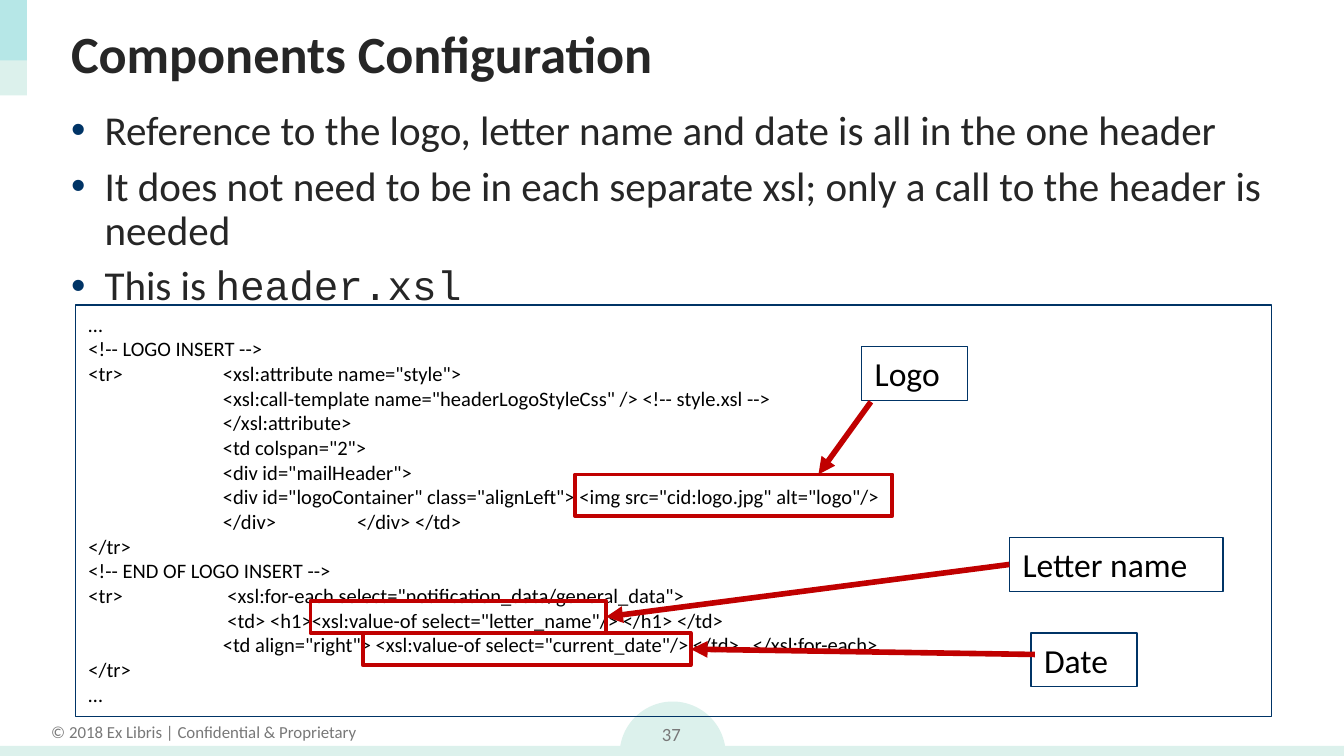
from lxml import etree
from pptx import Presentation
from pptx import util as u
from pptx.dml.color import RGBColor
from pptx.enum import shapes, text
from pptx.oxml import ns

Inches, Pt = u.Inches, u.Pt
COLORS = {"mint": "DCF1EC", "aqua": "50CFDA", "navy": "003466", "red": "C00000",
          "title": "262626", "gray": "787878", "black": "000000"}


def add_box(slide, place, kind="RECTANGLE", fill=None, line=None, width=0.75):
    shape = slide.shapes.add_shape(getattr(shapes.MSO_SHAPE, kind), *map(Inches, place))
    shape.shadow.inherit = False
    for target, color in ((shape.fill, fill), (shape.line.fill, line)):
        if color:
            target.solid()
            target.fore_color.rgb = RGBColor.from_string(COLORS[color])
        else:
            target.background()
    if line:
        shape.line.width = Pt(width)
    return shape


def write(shape, lines, size, color, frame_format={}, paragraph_format={}, bold=False):
    frame = shape.text_frame
    frame_values = {"word_wrap": True, "vertical_anchor": text.MSO_ANCHOR.TOP, **frame_format}
    for name, value in frame_values.items():
        setattr(frame, name, value)
    for index, line in enumerate(lines):
        paragraph = frame.paragraphs[0] if index == 0 else frame.add_paragraph()
        paragraph_values = {"alignment": text.PP_ALIGN.LEFT, **paragraph_format}
        for name, value in paragraph_values.items():
            setattr(paragraph, name, value)
        run = paragraph.add_run()
        run.text = line
        for name, value in {"size": Pt(size), "name": "Calibri", "bold": bold}.items():
            setattr(run.font, name, value)
        run.font.color.rgb = RGBColor.from_string(COLORS[color])
    return frame


presentation = Presentation()
presentation.slide_width = Inches(10)
presentation.slide_height = Inches(10 * 9 / 16)
slide = presentation.slides.add_slide(presentation.slide_layouts[6])

middle = {"vertical_anchor": text.MSO_ANCHOR.MIDDLE}
centered = {"alignment": text.PP_ALIGN.CENTER}
grow = {"auto_size": text.MSO_AUTO_SIZE.SHAPE_TO_FIT_TEXT}

add_box(slide, (4.61, 5.22, 0.79, 0.79), "OVAL", "mint")
footer = slide.shapes.add_textbox(*map(Inches, (0.27, 5.32, 2.49, 0.25)))
write(footer, ["© 2018 Ex Libris | Confidential & Proprietary"], 9, "gray",
      {"word_wrap": False, **grow}, centered)
add_box(slide, (0, 5.55, 10, 0.11), fill="mint")
add_box(slide, (0, 0, 0.2, 0.71), fill="mint")
accent = add_box(slide, (0, 0, 0.2, 0.45), fill="aqua")
accent_color = accent.fill._xPr.find(".//" + ns.qn("a:srgbClr"))
etree.SubElement(accent_color, ns.qn("a:alpha"), val="27000")

page_number = slide.shapes.add_textbox(*map(Inches, (4.7, 5.26, 0.59, 0.4)))
write(page_number, ["37"], 10, "gray", middle, centered)
title = slide.shapes.add_textbox(*map(Inches, (0.43, 0.08, 9.21, 0.63)))
write(title, ["Components Configuration"], 28, "title", middle, bold=True)

code = add_box(slide, (0.56, 2.27, 8.9, 3.06), line="navy")
code_frame = write(code, [
    "…",
    "<!-- LOGO INSERT -->",
    '<tr> \t<xsl:attribute name="style">',
    '\t<xsl:call-template name="headerLogoStyleCss" /> <!-- style.xsl -->',
    "\t</xsl:attribute>",
    '\t<td colspan="2">',
    '\t<div id="mailHeader">',
    '              \t<div id="logoContainer" class="alignLeft"> <img src="cid:logo.jpg" alt="logo"/>',
    "               \t</div>\t</div> </td>",
    "</tr>",
    "<!-- END OF LOGO INSERT -->",
    '<tr> \t <xsl:for-each select="notification_data/general_data">',
    '\t <td> <h1><xsl:value-of select="letter_name"/> </h1> </td>',
    '\t<td align="right"> <xsl:value-of select="current_date"/> </td>   </xsl:for-each>',
    "</tr>",
    "…",
], 11, "black", grow)
for paragraph in code_frame.paragraphs:
    tabs = etree.SubElement(paragraph._p.get_or_add_pPr(), ns.qn("a:tabLst"))
    for position in (1, 2):
        etree.SubElement(tabs, ns.qn("a:tab"), pos=str(Inches(position)), algn="l")

body = slide.shapes.add_textbox(*map(Inches, (0.43, 0.77, 9.21, 1.5)))
body_frame = write(body, [
    "Reference to the logo, letter name and date is all in the one header",
    "It does not need to be in each separate xsl; only a call to the header is needed",
    "This is ",
], 22, "title", paragraph_format={"line_spacing": 0.9})
for index, paragraph in enumerate(body_frame.paragraphs):
    if index:
        paragraph.space_before = Pt(6)
    properties = paragraph._p.get_or_add_pPr()
    properties.set("marL", str(Inches(0.25)))
    properties.set("indent", str(Inches(-0.25)))
    bullet_color = etree.SubElement(properties, ns.qn("a:buClr"))
    etree.SubElement(bullet_color, ns.qn("a:srgbClr"), val=COLORS["navy"])
    etree.SubElement(properties, ns.qn("a:buFont"), typeface="Arial")
    etree.SubElement(properties, ns.qn("a:buChar"), char="•")
file_name = body_frame.paragraphs[-1].add_run()
file_name.text = "header.xsl"
for name, value in {"size": Pt(22), "name": "Courier New"}.items():
    setattr(file_name.font, name, value)
file_name.font.color.rgb = RGBColor.from_string(COLORS["title"])

callouts = [
    ("Logo", (6.41, 2.58, 0.79, 0.4), (4.28, 3.53, 2.36, 0.31),
     (6.48, 2.99, 6.09, 3.53), False, False),
    ("Letter name", (7.51, 4, 1.59, 0.4), (2.31, 4.47, 2.2, 0.24),
     (7.51, 4.22, 4.52, 4.59), True, True),
    ("Date", (7.67, 4.71, 0.79, 0.4), (2.7, 4.71, 2.44, 0.24),
     (7.7, 4.87, 5.15, 4.83), False, True),
]
for label, label_place, frame_place, ends, joins_label, joins_frame in callouts:
    highlight = add_box(slide, frame_place, line="red", width=2)
    label_box = add_box(slide, label_place, line="navy")
    write(label_box, [label], 18, "black", grow)
    arrow = slide.shapes.add_connector(shapes.MSO_CONNECTOR.STRAIGHT, *map(Inches, ends))
    if joins_label:
        arrow.begin_connect(label_box, 1)
    if joins_frame:
        arrow.end_connect(highlight, 3)
    arrow.line.width = Pt(3)
    arrow.line.color.rgb = RGBColor.from_string(COLORS["red"])
    etree.SubElement(arrow.line._get_or_add_ln(), ns.qn("a:tailEnd"), type="triangle")
    etree.SubElement(arrow._element.spPr, ns.qn("a:effectLst"))

presentation.save("out.pptx")
